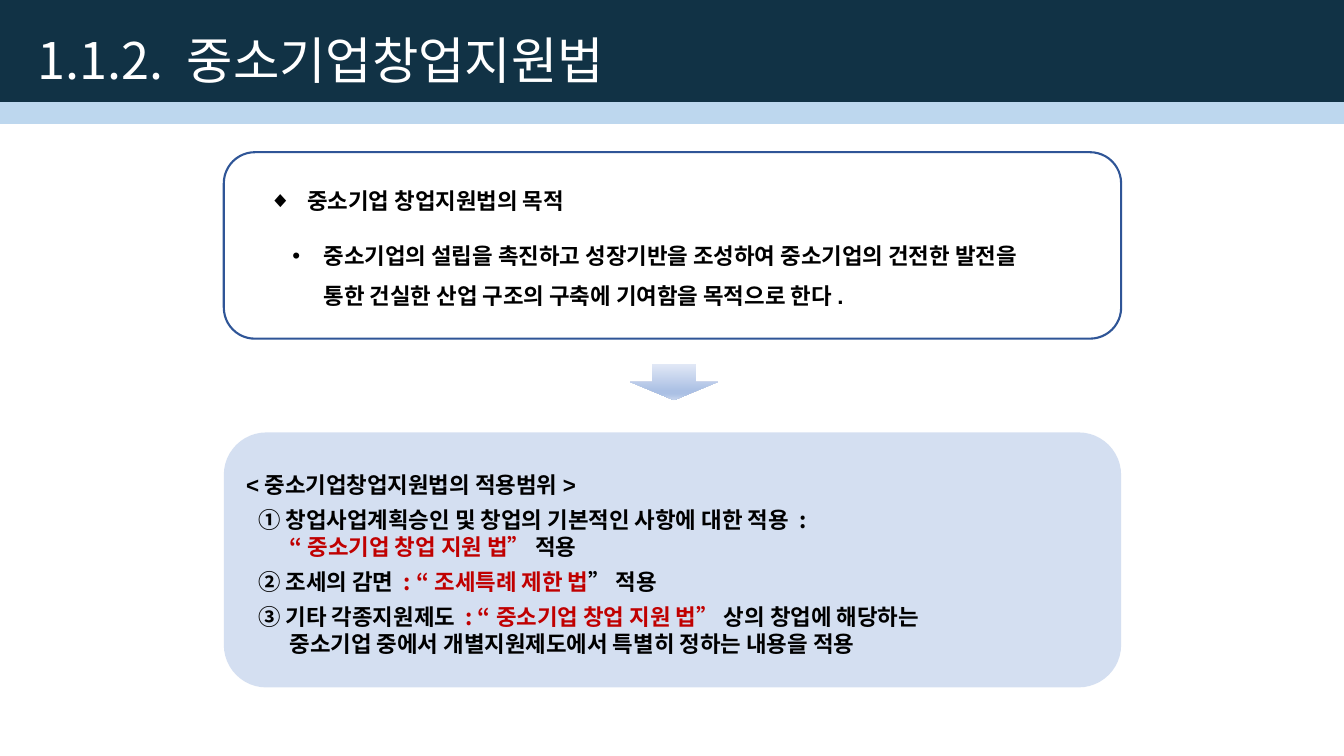
from dataclasses import dataclass
from lxml.etree import SubElement
from pptx import Presentation
from pptx.dml.color import RGBColor
from pptx.enum.shapes import MSO_SHAPE
from pptx.enum.text import MSO_ANCHOR, MSO_AUTO_SIZE, PP_ALIGN
from pptx.oxml.ns import qn
from pptx.util import Inches, Pt


@dataclass(frozen=True)
class Theme:
    navy: str = "113245"
    sky: str = "BDD7EE"
    outline: str = "2F5597"
    panel: str = "B4C7E7"
    white: str = "FFFFFF"
    black: str = "000000"
    red: str = "C00000"
    korean: str = "Noto Sans CJK KR"
    latin: str = "Arial"
    title_size: int = 36
    body_size: int = 16


theme = Theme()


def add_box(kind, left, top, width, height, fill=None, line=None, weight=1):
    box = page.shapes.add_shape(kind, Inches(left), Inches(top), Inches(width), Inches(height))
    box.shadow.inherit = False
    if fill:
        box.fill.solid()
        box.fill.fore_color.rgb = RGBColor.from_string(fill)
    else:
        box.fill.background()
    if line:
        box.line.color.rgb = RGBColor.from_string(line)
        box.line.width = Pt(weight)
    else:
        box.line.fill.background()
    return box


def style(para, face, size, color, bold, left=0, hanging=0, bullet=None):
    para.alignment = PP_ALIGN.LEFT
    para.font.name = face
    para.font.size = Pt(size)
    para.font.bold = bold
    para.font.color.rgb = RGBColor.from_string(color)
    properties = para._p.get_or_add_pPr()
    properties.set("marL", str(Inches(left)))
    properties.set("indent", str(Inches(-hanging)))
    if bullet:
        mark_font = SubElement(properties, qn("a:buFont"), typeface=theme.latin)
        mark = SubElement(properties, qn("a:buChar"), char=bullet)
        properties.find(qn("a:defRPr")).addprevious(mark_font)
        mark_font.addnext(mark)


deck = Presentation()
deck.slide_width, deck.slide_height = Inches(13.33), Inches(7.5)
page = deck.slides.add_slide(deck.slide_layouts[1])

for top, height, color in ((0, 1.01, theme.navy), (1, 0.23, theme.sky)):
    band = add_box(MSO_SHAPE.RECTANGLE, 0, top, 13.33, height, color)
    page.shapes._spTree.insert(2, band._element)

title = page.shapes.title
title.left, title.top, title.width, title.height = map(Inches, (0.27, 0.1, 8.94, 1.05))
title.text_frame.text = "1.1.2. 중소기업창업지원법"
title.text_frame.vertical_anchor = MSO_ANCHOR.MIDDLE
title.text_frame.paragraphs[0].line_spacing = 0.9
style(title.text_frame.paragraphs[0], theme.korean, theme.title_size, theme.white, False)

add_box(MSO_SHAPE.ROUNDED_RECTANGLE, 2.22, 1.51, 8.9, 1.85, line=theme.outline, weight=1.5)

arrow = add_box(MSO_SHAPE.DOWN_ARROW, 6.25, 3.61, 0.87, 0.36)
arrow.fill.gradient()
arrow.fill.gradient_angle = 270
stops = arrow._element.spPr.find(qn("a:gradFill")).find(qn("a:gsLst"))
for stop in list(stops):
    stops.remove(stop)
for percent, color in ((0, "E1E8F6"), (74, "ABC0E4"), (83, "ABC0E4"), (100, "C7D5ED")):
    stop = SubElement(stops, qn("a:gs"), pos=str(percent * 1000))
    SubElement(stop, qn("a:srgbClr"), val=color)

scope = add_box(MSO_SHAPE.ROUNDED_RECTANGLE, 2.22, 4.29, 8.9, 2.53, theme.panel)
panel_color = scope._element.spPr.find(qn("a:solidFill"))[0]
SubElement(panel_color, qn("a:alpha"), val="56000")
scope.text_frame.vertical_anchor = MSO_ANCHOR.MIDDLE
scope.text_frame.margin_top = Inches(0.13)
scope_lines = (
    (("<중소기업창업지원법의 적용범위>", None),),
    (("① 창업사업계획승인 및 창업의 기본적인 사항에 대한 적용 :\n", None),
     ("“중소기업 창업 지원 법” ", theme.red), ("적용", None)),
    (("② 조세의 감면 ", None), (": “조세특례 제한 법", theme.red), ("” 적용", None)),
    (("③ 기타 각종지원제도 ", None), (": “중소기업 창업 지원 법” ", theme.red),
     ("상의 창업에 해당하는\n중소기업 중에서 개별지원제도에서 특별히 정하는 내용을 적용", None)),
)
for number, pieces in enumerate(scope_lines):
    para = scope.text_frame.paragraphs[0] if number == 0 else scope.text_frame.add_paragraph()
    face, left, hanging = (theme.korean, 0.43, 0.31) if number else (theme.latin, 0, 0)
    style(para, face, theme.body_size, theme.black, True, left, hanging)
    para.space_before = Pt(6)
    for words, color in pieces:
        for index, part in enumerate(words.split("\n")):
            if index:
                para.add_line_break()
            if part:
                span = para.add_run()
                span.text = part
                if color:
                    span.font.color.rgb = RGBColor.from_string(color)

heading = add_box(MSO_SHAPE.RECTANGLE, 2.53, 1.74, 5.12, 0.5, theme.white, theme.white)
heading.text_frame.text = "중소기업 창업지원법의 목적"
heading.text_frame.vertical_anchor = MSO_ANCHOR.MIDDLE
style(heading.text_frame.paragraphs[0], theme.korean, theme.body_size, theme.black, True,
      0.42, 0.38, "◆")
heading.text_frame.paragraphs[0].level = 0

purpose = page.placeholders[1]
purpose.left, purpose.top, purpose.width, purpose.height = map(Inches, (2.8, 2.22, 8.19, 0.86))
purpose.text_frame.auto_size = MSO_AUTO_SIZE.SHAPE_TO_FIT_TEXT
purpose.text_frame.text = (
    "중소기업의 설립을 촉진하고 성장기반을 조성하여 중소기업의 건전한 발전을\v"
    "통한 건실한 산업 구조의 구축에 기여함을 목적으로 한다."
)
para = purpose.text_frame.paragraphs[0]
style(para, theme.latin, theme.body_size, theme.black, True, 0.31, 0.31, "•")
para.line_spacing = 1.5
para.space_before = Pt(6)

deck.save("out.pptx")
